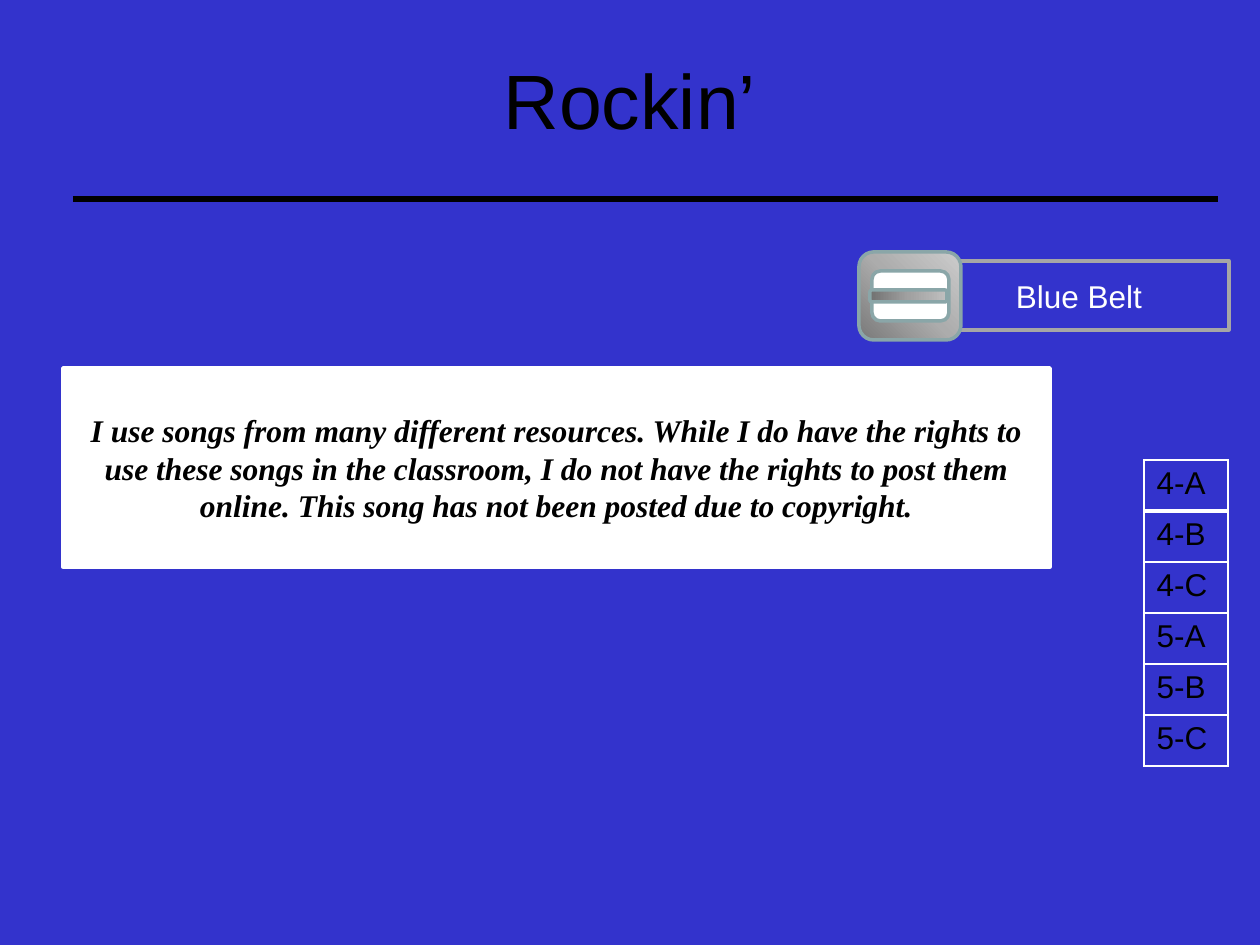
from copy import deepcopy
from pptx import Presentation
from pptx.dml.color import RGBColor
from pptx.enum.shapes import MSO_CONNECTOR, MSO_SHAPE
from pptx.enum.text import MSO_ANCHOR, PP_ALIGN
from pptx.oxml import parse_xml
from pptx.oxml.ns import nsdecls
from pptx.util import Emu, Pt

BLUE = RGBColor(0x33, 0x33, 0xCC)
BLACK = RGBColor(0, 0, 0)
WHITE = RGBColor(0xFF, 0xFF, 0xFF)
GREY = RGBColor(0xA6, 0xA6, 0xA6)
TEAL = RGBColor(0x8A, 0xA6, 0xA8)
BUCKLE = [RGBColor(0x79, 0x79, 0x79), RGBColor(0xAC, 0xAC, 0xAC), RGBColor(0xCC, 0xCC, 0xCC)]
STRAP = [RGBColor(0x71, 0x71, 0x71), RGBColor(0xA1, 0xA1, 0xA1), RGBColor(0xBF, 0xBF, 0xBF)]

TITLE = "Rockin’"
BELT = "Blue Belt"
NOTE = ("I use songs from many different resources. While I do have the rights to use "
        "these songs in the classroom, I do not have the rights to post them online. "
        "This song has not been posted due to copyright.")
CLASSES = ["4-A", "4-B", "4-C", "5-A", "5-B", "5-C"]
BUCKLE_PARTS = [
    ((859, 252, 102, 88), BUCKLE, 45),
    ((872, 271, 77, 50), WHITE, 0),
    ((870, 290, 77, 12), STRAP, 0),
]
ROW_H = 51


def px(n):
    return Emu(n * 914400 // 126)


def write(tf, text, size, color, font="Arial", align=PP_ALIGN.CENTER):
    tf.word_wrap = True
    p = tf.paragraphs[0]
    p.text = text
    p.alignment = align
    p.font.size, p.font.name, p.font.color.rgb = Pt(size), font, color
    return p


def paint(fill, colors, angle):
    fill.gradient()
    fill.gradient_angle = angle
    first = fill._fill._gradFill.gsLst[0]
    first.addnext(deepcopy(first))
    for stop, color, pos in zip(fill.gradient_stops, colors, (0, 0.5, 1)):
        stop.color.rgb, stop.position = color, pos


def add_box(shapes, kind, box, fill, line, angle=0):
    s = shapes.add_shape(kind, *map(px, box))
    s.shadow.inherit = False
    if isinstance(fill, list):
        paint(s.fill, fill, angle)
    else:
        s.fill.solid()
        s.fill.fore_color.rgb = fill
    s.line.color.rgb, s.line.width = line, Pt(2)
    s.text_frame.vertical_anchor = MSO_ANCHOR.MIDDLE
    return s


def border(cell, widths):
    tcPr = cell._tc.get_or_add_tcPr()
    for i, (side, width) in enumerate(zip("LRTB", widths)):
        tcPr.insert(i, parse_xml(
            f'<a:ln{side} {nsdecls("a")} w="{Pt(width)}"><a:solidFill>'
            f'<a:srgbClr val="{WHITE}"/></a:solidFill></a:ln{side}>'))


prs = Presentation()
prs.slide_width, prs.slide_height = px(1260), px(945)
slide = prs.slides.add_slide(prs.slide_layouts[6])
slide.background.fill.solid()
slide.background.fill.fore_color.rgb = BLUE
shapes = slide.shapes

title = shapes.add_textbox(px(63), px(20), px(1134), px(157))
title.text_frame.vertical_anchor = MSO_ANCHOR.MIDDLE
write(title.text_frame, TITLE, 44, BLACK)

rule = shapes.add_connector(MSO_CONNECTOR.STRAIGHT, px(73), px(199), px(1218), px(199))
rule.line.color.rgb, rule.line.width = BLACK, Pt(3)
rule._element.spPr.append(parse_xml(f'<a:effectLst {nsdecls("a")}/>'))

belt = shapes.add_group_shape().shapes
label = add_box(belt, MSO_SHAPE.RECTANGLE, (929, 261, 300, 69), BLUE, GREY)
write(label.text_frame, BELT, 18, WHITE)
for box, fill, angle in BUCKLE_PARTS:
    add_box(belt, MSO_SHAPE.ROUNDED_RECTANGLE, box, fill, TEAL, angle)

table = shapes.add_table(len(CLASSES), 1, px(1144), px(460), px(84),
                         px(ROW_H * len(CLASSES))).table
table.first_row = table.horz_banding = False
for i, name in enumerate(CLASSES):
    cell = table.cell(i, 0)
    cell.fill.background()
    write(cell.text_frame, name, 18, BLACK, align=PP_ALIGN.LEFT)
    border(cell, (1, 1, 3 if i == 1 else 1, 3 if i == 0 else 1))

note = add_box(shapes, MSO_SHAPE.RECTANGLE, (63, 368, 987, 199), WHITE, WHITE)
p = write(note.text_frame, NOTE, 18, BLACK, "Times New Roman")
p.font.bold = p.font.italic = True

prs.save("out.pptx")
